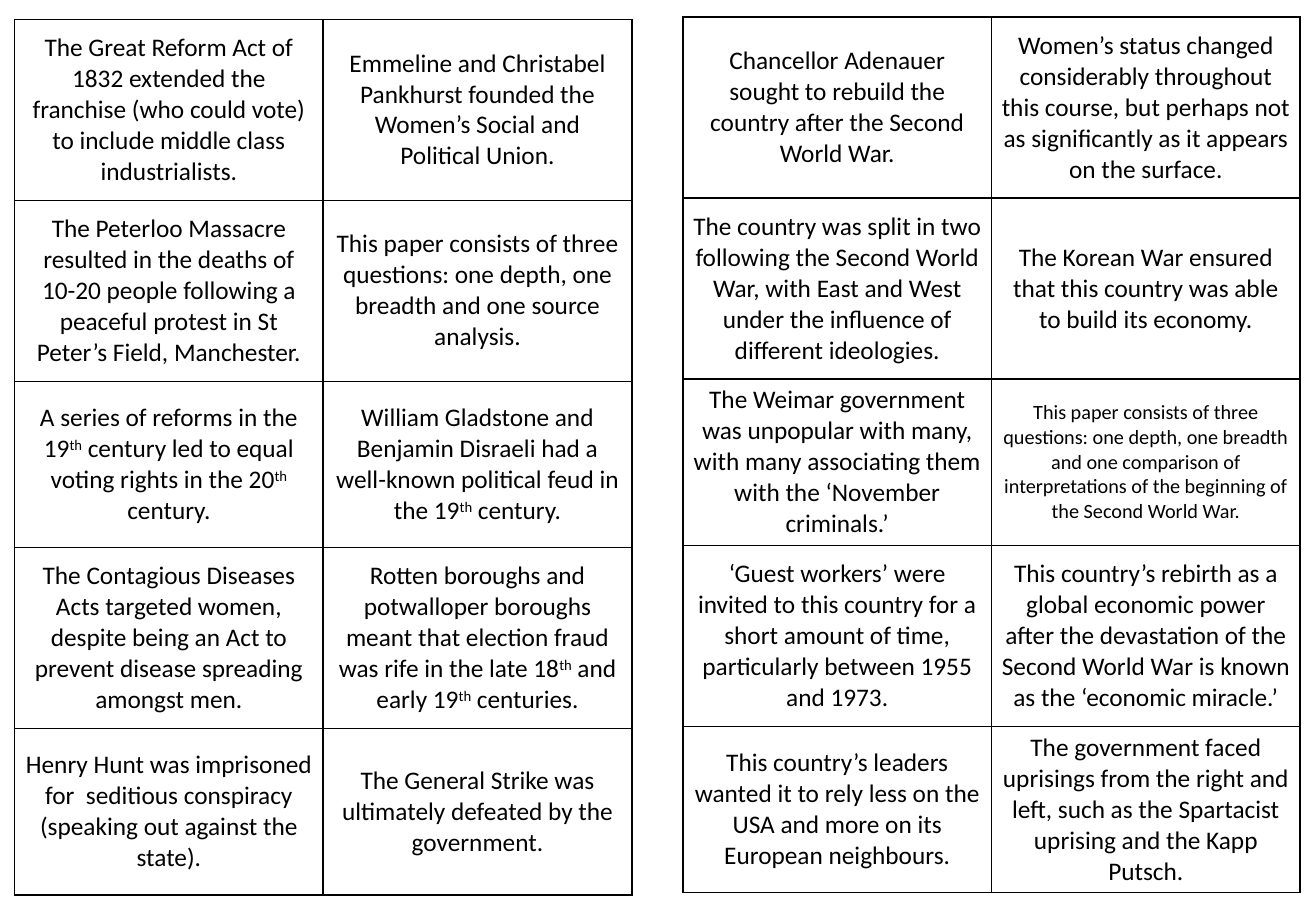
from pptx import Presentation
from pptx.dml.color import RGBColor
from pptx.enum.text import MSO_ANCHOR as ANCHOR, PP_ALIGN as ALIGN
from pptx.oxml import parse_xml
from pptx.oxml.ns import nsdecls
from pptx.util import Emu, Pt

PX = 9144
COLORS = {"ink": "000000"}
CELL = {
    "vertical_anchor": ANCHOR.MIDDLE,
    "margin_left": Emu(8 * PX),
    "margin_right": Emu(8 * PX),
    "margin_top": Emu(4 * PX),
    "margin_bottom": Emu(4 * PX),
}
FONT = {"name": "Calibri", "size": Pt(15), "bold": False}
SMALL = {**FONT, "size": Pt(12)}
ROW_HEIGHTS = [149, 149, 137, 149, 137]

BRITAIN = [
    ("The Great Reform Act of 1832 extended the franchise (who could vote) to include middle class industrialists.",
     "Emmeline and Christabel Pankhurst founded the Women’s Social and Political Union."),
    ("The Peterloo Massacre resulted in the deaths of 10-20 people following a peaceful protest in St Peter’s Field, Manchester.",
     "This paper consists of three questions: one depth, one breadth and one source analysis."),
    ("A series of reforms in the 19^th^ century led to equal voting rights in the 20^th^ century.",
     "William Gladstone and Benjamin Disraeli had a well-known political feud in the 19^th^ century."),
    ("The Contagious Diseases Acts targeted women, despite being an Act to prevent disease spreading amongst men.",
     "Rotten boroughs and potwalloper boroughs meant that election fraud was rife in the late 18^th^ and early 19^th^ centuries."),
    ("Henry Hunt was imprisoned for  seditious conspiracy (speaking out against the state).",
     "The General Strike was ultimately defeated by the government."),
]
COMPARISON = "This paper consists of three questions: one depth, one breadth and one comparison of interpretations of the beginning of the Second World War."
GERMANY = [
    ("Chancellor Adenauer sought to rebuild the country after the Second World War.",
     "Women’s status changed considerably throughout this course, but perhaps not as significantly as it appears on the surface."),
    ("The country was split in two following the Second World War, with East and West under the influence of different ideologies.",
     "The Korean War ensured that this country was able to build its economy."),
    ("The Weimar government was unpopular with many, with many associating them with the ‘November criminals.’",
     COMPARISON),
    ("‘Guest workers’ were invited to this country for a short amount of time, particularly between 1955 and 1973.",
     "This country’s rebirth as a global economic power after the devastation of the Second World War is known as the ‘economic miracle.’"),
    ("This country’s leaders wanted it to rely less on the USA and more on its European neighbours.",
     "The government faced uprisings from the right and left, such as the Spartacist uprising and the Kapp Putsch."),
]


def apply(target, values):
    """Set each attribute of the target from a dict."""
    for name, value in values.items():
        setattr(target, name, value)


def add_borders(cell):
    """Draw a thin line on all four sides of a cell."""
    tcPr = cell._tc.get_or_add_tcPr()
    for i, side in enumerate(("lnL", "lnR", "lnT", "lnB")):
        tcPr.insert(i, parse_xml(
            f'<a:{side} {nsdecls("a")} w="12700"><a:solidFill>'
            f'<a:srgbClr val="{COLORS["ink"]}"/></a:solidFill></a:{side}>'))


def fill_cell(cell, text):
    """Write a centred statement, raising the parts between carets."""
    apply(cell, CELL)
    cell.fill.background()
    add_borders(cell)
    p = cell.text_frame.paragraphs[0]
    p.alignment = ALIGN.CENTER
    for i, part in enumerate(text.split("^")):
        r = p.add_run()
        r.text = part
        apply(r.font, SMALL if text == COMPARISON else FONT)
        r.font.color.rgb = RGBColor.from_string(COLORS["ink"])
        if i % 2:
            r.font._element.set("baseline", "30000")


def add_cards(s, box, statements):
    """Place a grid of statement cards in the given box."""
    x, y, w, h = (Emu(v * PX) for v in box)
    cols = len(statements[0])
    table = s.shapes.add_table(len(statements), cols, x, y, w, h).table
    apply(table, {"first_row": False, "horz_banding": False})
    for column in table.columns:
        column.width = Emu(w // cols)
    for row, height, texts in zip(table.rows, ROW_HEIGHTS, statements):
        row.height = Emu(height * PX)
        for cell, text in zip(row.cells, texts):
            fill_cell(cell, text)


def main():
    """Build the slide with its two card grids."""
    prs = Presentation()
    apply(prs, {"slide_width": Emu(1083 * PX), "slide_height": Emu(750 * PX)})
    s = prs.slides.add_slide(prs.slide_layouts[6])
    height = sum(ROW_HEIGHTS)
    add_cards(s, (12, 16, 508, height), BRITAIN)
    add_cards(s, (562, 14, 508, height), GERMANY)
    prs.save("out.pptx")


if __name__ == "__main__":
    main()
